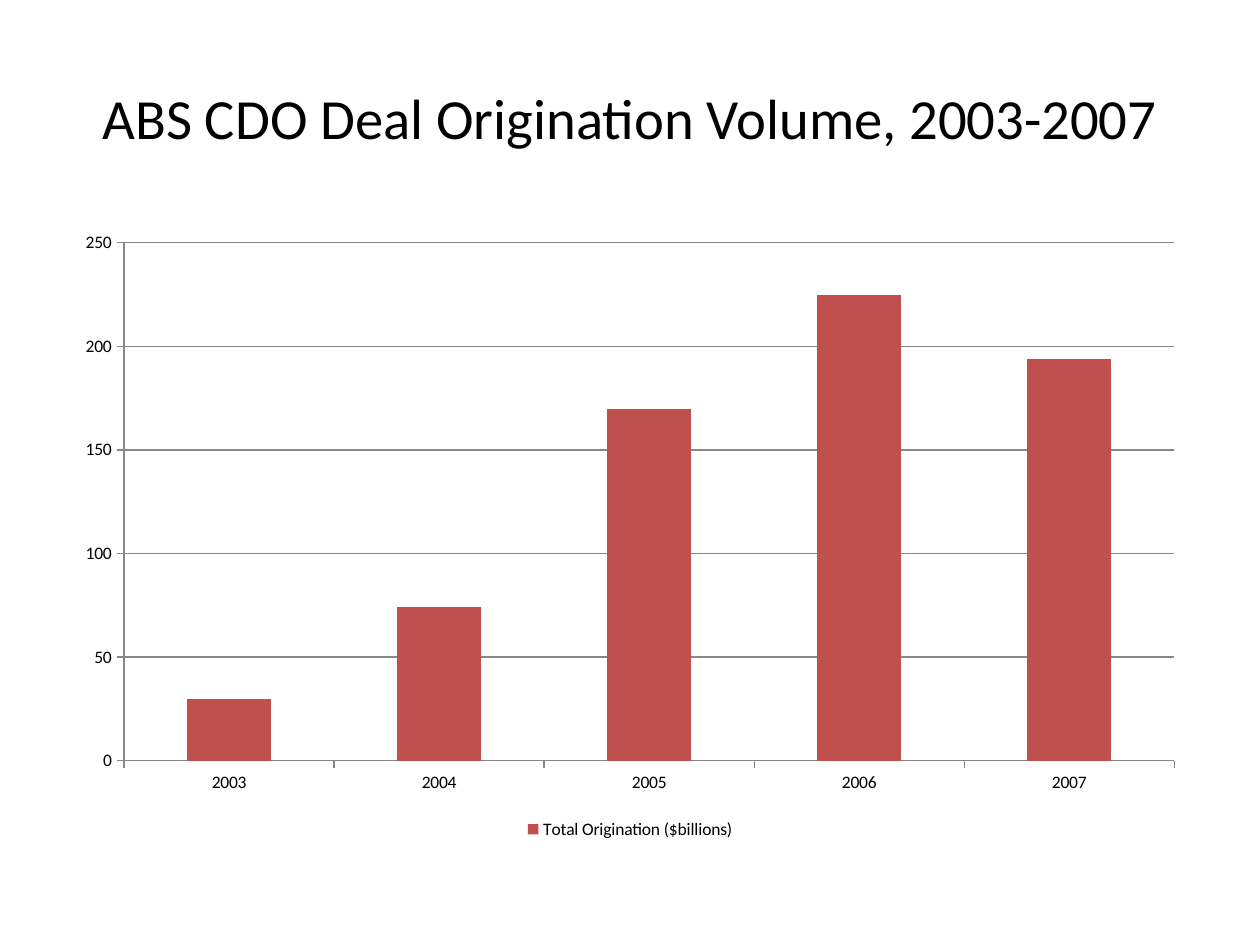
from pptx import Presentation
from pptx.chart.data import CategoryChartData
from pptx.dml.color import RGBColor
from pptx.enum.chart import XL_CHART_TYPE, XL_LEGEND_POSITION, XL_TICK_MARK
from pptx.enum.text import MSO_ANCHOR, PP_ALIGN
from pptx.util import Inches, Pt

COLORS = {"text": "000000", "bar": "C0504D", "axis": "878787"}
FONT_NAME = "Calibri"
ORIGINATION = {"2003": 30, "2004": 74, "2005": 170, "2006": 225, "2007": 194}


def color(name):
    return RGBColor.from_string(COLORS[name])


def set_font(font, size):
    font.name = FONT_NAME
    font.size = Pt(size)
    font.color.rgb = color("text")


def add_title(slide, left, top, width, height):
    box = slide.shapes.add_textbox(left, top, width, height)
    frame = box.text_frame
    frame.word_wrap = True
    frame.vertical_anchor = MSO_ANCHOR.MIDDLE
    paragraph = frame.paragraphs[0]
    paragraph.text = "ABS CDO Deal Origination Volume, 2003-2007"
    paragraph.alignment = PP_ALIGN.CENTER
    set_font(paragraph.font, 32.4)


def style_line(line):
    line.color.rgb = color("axis")
    line.width = Pt(0.75)


def add_origination_chart(slide, left, top, width, height):
    data = CategoryChartData(number_format="#,##0")
    data.categories = list(ORIGINATION)
    data.add_series("Total Origination ($billions)", list(ORIGINATION.values()))
    chart = slide.shapes.add_chart(
        XL_CHART_TYPE.COLUMN_CLUSTERED, left, top, width, height, data
    ).chart
    set_font(chart.font, 10)
    chart.has_title = False
    chart.has_legend = True
    chart.legend.position = XL_LEGEND_POSITION.BOTTOM
    chart.legend.include_in_layout = False

    for axis in (chart.category_axis, chart.value_axis):
        axis.major_tick_mark = XL_TICK_MARK.OUTSIDE
        axis.minor_tick_mark = XL_TICK_MARK.NONE
        style_line(axis.format.line)

    value_axis = chart.value_axis
    value_axis.minimum_scale = 0
    value_axis.maximum_scale = 250
    value_axis.major_unit = 50
    value_axis.tick_labels.number_format = "#,##0"
    value_axis.tick_labels.number_format_is_linked = False
    value_axis.has_major_gridlines = True
    style_line(value_axis.major_gridlines.format.line)

    plot = chart.plots[0]
    plot.gap_width = 150
    plot.vary_by_categories = False
    fill = plot.series[0].format.fill
    fill.solid()
    fill.fore_color.rgb = color("bar")


def main():
    presentation = Presentation()
    presentation.slide_width = Inches(10)
    presentation.slide_height = Inches(7.5)
    slide = presentation.slides.add_slide(presentation.slide_layouts[6])
    add_title(slide, Inches(0.5), Inches(0.3), Inches(9), Inches(1.25))
    add_origination_chart(slide, Inches(0.5), Inches(1.75), Inches(9), Inches(4.95))
    presentation.save("out.pptx")


if __name__ == "__main__":
    main()
